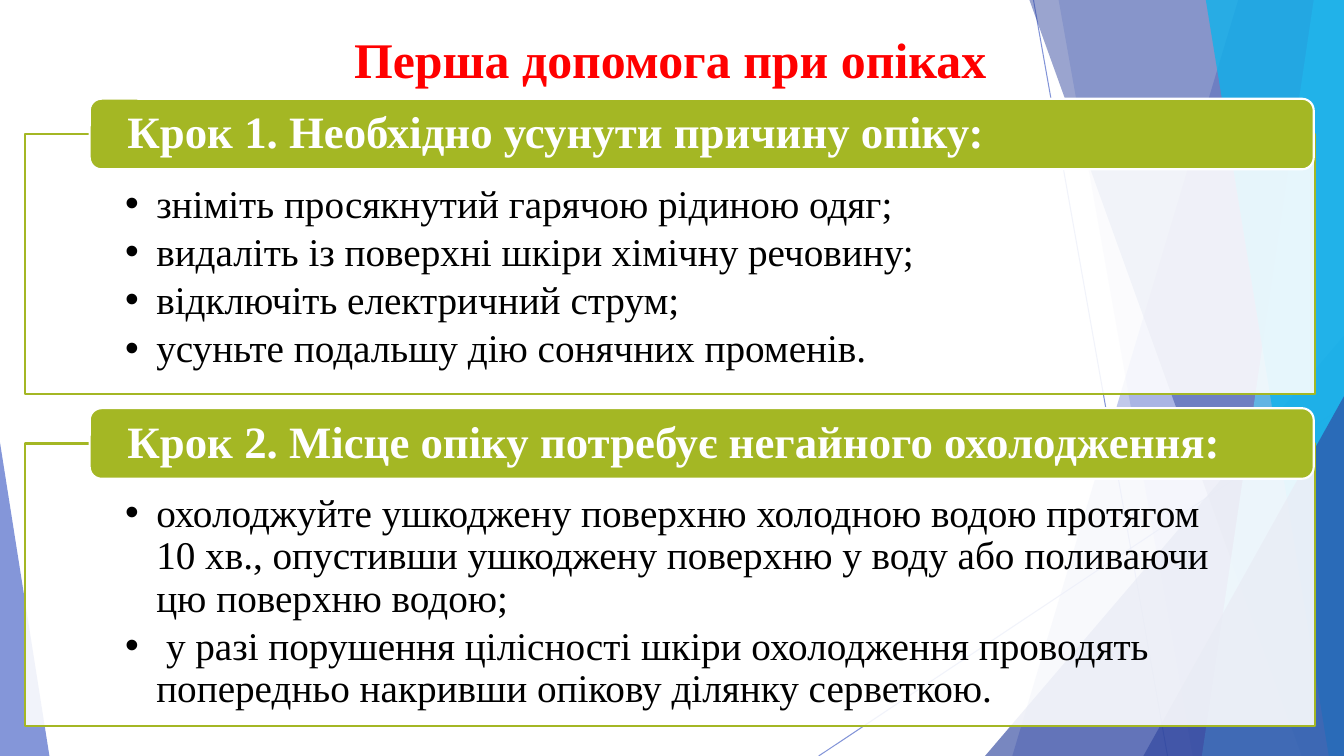
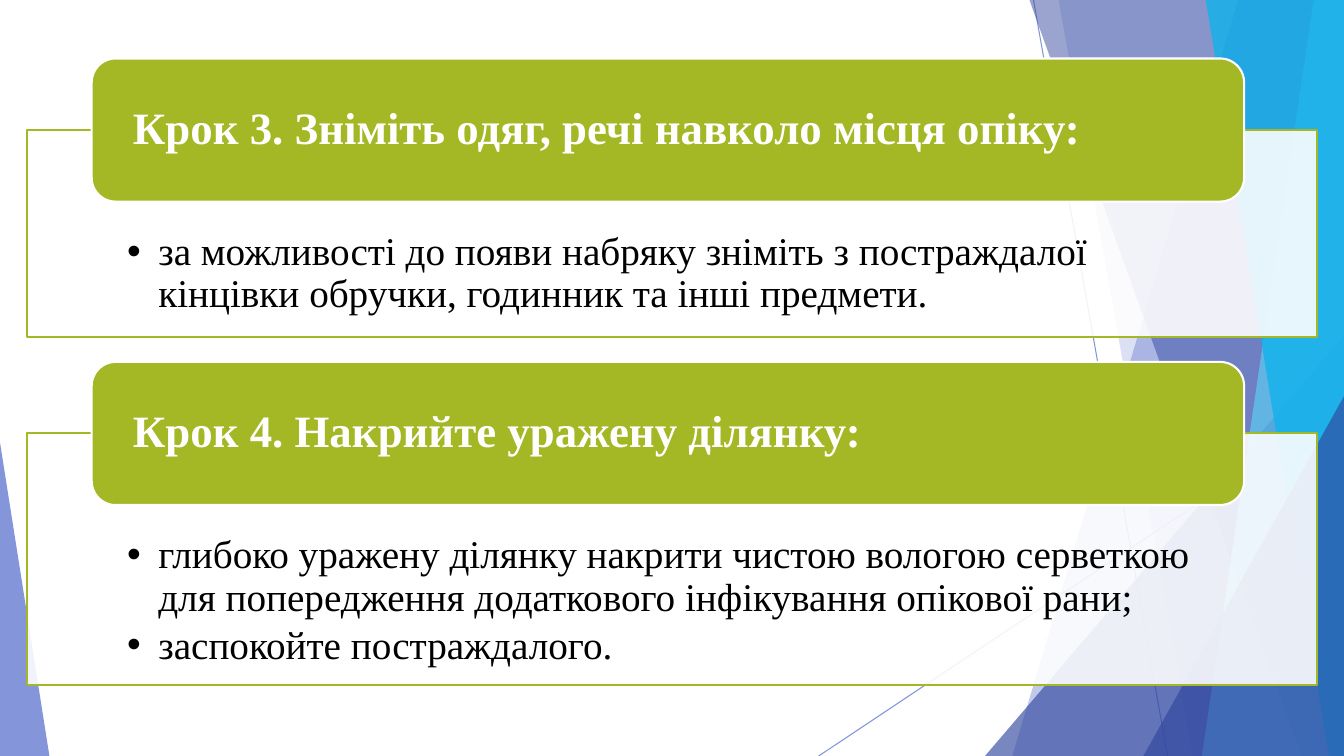
from lxml.etree import SubElement
from pptx import Presentation
from pptx.dml.color import RGBColor
from pptx.enum.shapes import MSO_CONNECTOR, MSO_SHAPE
from pptx.enum.text import MSO_ANCHOR as Anchor, PP_ALIGN as Align
from pptx.oxml.ns import qn
from pptx.util import Inches, Pt

WIDTH, HEIGHT = 13.33, 7.5
FONT = "Times New Roman"

WHITE = RGBColor(0xFF, 0xFF, 0xFF)
BLACK = RGBColor(0x00, 0x00, 0x00)
RED = RGBColor(0xFF, 0x00, 0x00)
GREEN = RGBColor(0xA4, 0xB7, 0x24)
BLUE = RGBColor(0x4E, 0x67, 0xC8)
NAVY = RGBColor(0x31, 0x47, 0x9F)
SKY = RGBColor(0x5E, 0xCC, 0xF3)
CYAN = RGBColor(0x11, 0xB2, 0xEB)

TITLE_STYLE = {"size": Pt(35.6), "bold": True}
HEAD_STYLE = {"size": Pt(32), "bold": True}
ITEM_STYLE = {"size": Pt(28), "bold": False}
BULLET_INDENT = 0.31

# Background: x at the top and bottom of each band's left edge, colour, opacity
BANDS_BEHIND = [(12.28, 10.04, BLUE, 35), (10.5, 11.83, BLUE, 20)]
BANDS_FRONT = [(10.21, 12.91, NAVY, 49), (13.03, 11.92, SKY, 69),
               (11.96, 13.18, CYAN, 80)]
RAYS = [(10.25, 0, 11.58, HEIGHT), (WIDTH, 4.03, 8.12, HEIGHT)]


def set_opacity(shape, percent):
    """Make every colour set so far on the shape partly transparent."""
    for color in shape.element.spPr.iter(qn("a:srgbClr")):
        SubElement(color, qn("a:alpha"), val=str(percent * 1000))


def paint(shape, fill, opacity=100, line=None):
    shape.shadow.inherit = False
    shape.fill.solid()
    shape.fill.fore_color.rgb = fill
    if opacity < 100:
        set_opacity(shape, opacity)
    if line is None:
        shape.line.fill.background()
    else:
        shape.line.color.rgb = line
        shape.line.width = Pt(1.5)


def add_box(page, kind, box, adjust=None, **look):
    shape = page.shapes.add_shape(kind, *map(Inches, box))
    if adjust is not None:
        shape.adjustments[0] = adjust
    paint(shape, **look)
    return shape


def set_frame(frame, anchor, margins):
    frame.word_wrap = True
    frame.vertical_anchor = anchor
    for side, length in zip(("left", "top", "right", "bottom"), margins):
        setattr(frame, f"margin_{side}", Inches(length))


def write(para, text, style, color, align=Align.LEFT):
    para.alignment = align
    para.line_spacing = 0.9
    span = para.add_run()
    span.text = text
    span.font.name = FONT
    span.font.color.rgb = color
    for name, value in style.items():
        setattr(span.font, name, value)


def add_bullet(para):
    props = para._p.get_or_add_pPr()
    props.set("marL", str(Inches(BULLET_INDENT)))
    props.set("indent", str(-Inches(BULLET_INDENT)))
    SubElement(props, qn("a:buFont"), typeface="Arial")
    SubElement(props, qn("a:buChar"), char="•")


# Shared background
def draw_ray(page, ends):
    ray = page.shapes.add_connector(MSO_CONNECTOR.STRAIGHT, *map(Inches, ends))
    ray.line.color.rgb = BLUE
    ray.line.width = Pt(0.75)
    set_opacity(ray, 69)
    SubElement(ray.element.spPr, qn("a:effectLst"))


def draw_band(page, top_x, bottom_x, color, opacity):
    """Fill from a slanted left edge to the right side of the slide."""
    builder = page.shapes.build_freeform(Inches(top_x), 0)
    corners = [(WIDTH, 0), (WIDTH, HEIGHT), (bottom_x, HEIGHT)]
    builder.add_line_segments([tuple(map(Inches, c)) for c in corners], close=True)
    paint(builder.convert_to_shape(), color, opacity)


def draw_corner(page, left, top, right, peak, color, opacity):
    """Stand a triangle on the bottom edge; peak is 0 (left) to 1 (right)."""
    add_box(page, MSO_SHAPE.ISOSCELES_TRIANGLE,
            (left, top, right - left, HEIGHT - top),
            adjust=peak, fill=color, opacity=opacity)


def draw_background(page):
    for ends in RAYS:
        draw_ray(page, ends)
    for band in BANDS_BEHIND:
        draw_band(page, *band)
    draw_corner(page, 9.77, 3.33, WIDTH, 1, NAVY, 65)
    for band in BANDS_FRONT:
        draw_band(page, *band)
    draw_corner(page, 11.34, 3.93, WIDTH, 1, NAVY, 65)
    draw_corner(page, 0, 4.39, 0.49, 0, BLUE, 69)


def move_to_layout(page):
    """Hand the shapes of a page to its layout, so all pages share them."""
    layout = page.slide_layout
    for holder in list(layout.placeholders):
        layout.shapes.element.remove(holder.element)
    for shape in list(page.shapes):
        layout.shapes.element.append(shape.element)


# Slide parts
def add_title(page, text, box):
    frame = page.shapes.add_textbox(*map(Inches, box)).text_frame
    set_frame(frame, Anchor.MIDDLE, (0.1, 0.05, 0.1, 0.05))
    write(frame.paragraphs[0], text, TITLE_STYLE, RED, Align.CENTER)


def add_step(page, box, head_size, head, items):
    """Frame a list, with a heading straddling the frame's top edge."""
    left, top, width, height = box
    head_width, head_height = head_size

    # Framed list
    panel = add_box(page, MSO_SHAPE.RECTANGLE,
                    (left, top + head_height / 2, width, height - head_height / 2),
                    fill=WHITE, opacity=89, line=GREEN)
    frame = panel.text_frame
    set_frame(frame, Anchor.TOP, (0.99, 0.71 * head_height, 0.99, 0.22))
    for number, item in enumerate(items):
        para = frame.add_paragraph() if number else frame.paragraphs[0]
        para.space_before = Pt(4.2 if number else 0)
        write(para, item, ITEM_STYLE, BLACK)
        add_bullet(para)

    # Heading
    label = add_box(page, MSO_SHAPE.ROUNDED_RECTANGLE,
                    (left + 0.64, top, head_width, head_height),
                    adjust=0.167, fill=GREEN, line=WHITE)
    set_frame(label.text_frame, Anchor.MIDDLE, (0.34, 0, 0.34, 0))
    write(label.text_frame.paragraphs[0], head, HEAD_STYLE, WHITE)


def add_steps(page, left, head_size, steps):
    for top, height, head, items in steps:
        add_step(page, (left, top, 12.79, height), head_size, head, items)


# Content: top, height, heading, list
COOLING_STEPS = [
    (0.98, 2.93, "Крок 1. Необхідно усунути причину опіку:", [
        "зніміть просякнутий гарячою рідиною одяг;",
        "видаліть із поверхні шкіри хімічну речовину;",
        "відключіть електричний струм;",
        "усуньте подальшу дію сонячних променів.",
    ]),
    (4.05, 3.15, "Крок 2. Місце опіку потребує негайного охолодження:", [
        "охолоджуйте ушкоджену поверхню холодною водою протягом 10 хв., "
        "опустивши ушкоджену поверхню у воду або поливаючи цю поверхню водою;",
        " у разі порушення цілісності шкіри охолодження проводять "
        "попередньо накривши опікову ділянку серветкою.",
    ]),
]
COVERING_STEPS = [
    (0.58, 2.76, "Крок 3. Зніміть одяг, речі навколо місця опіку:", [
        "за можливості до появи набряку зніміть з постраждалої кінцівки "
        "обручки, годинник та інші предмети.",
    ]),
    (3.59, 3.21, "Крок 4. Накрийте уражену ділянку:", [
        "глибоко уражену ділянку накрити чистою вологою серветкою "
        "для попередження додаткового інфікування опікової рани;",
        "заспокойте постраждалого.",
    ]),
]


def main():
    deck = Presentation()
    deck.slide_width, deck.slide_height = Inches(WIDTH), Inches(HEIGHT)
    blank = deck.slide_layouts[6]
    cooling, covering = (deck.slides.add_slide(blank) for _ in range(2))

    draw_background(cooling)
    move_to_layout(cooling)

    add_title(cooling, "Перша допомога при опіках", (1.25, 0.29, 10.8, 0.66))
    add_steps(cooling, 0.25, (12.14, 0.7), COOLING_STEPS)
    add_steps(covering, 0.27, (11.43, 1.42), COVERING_STEPS)

    deck.save("out.pptx")


if __name__ == "__main__":
    main()
